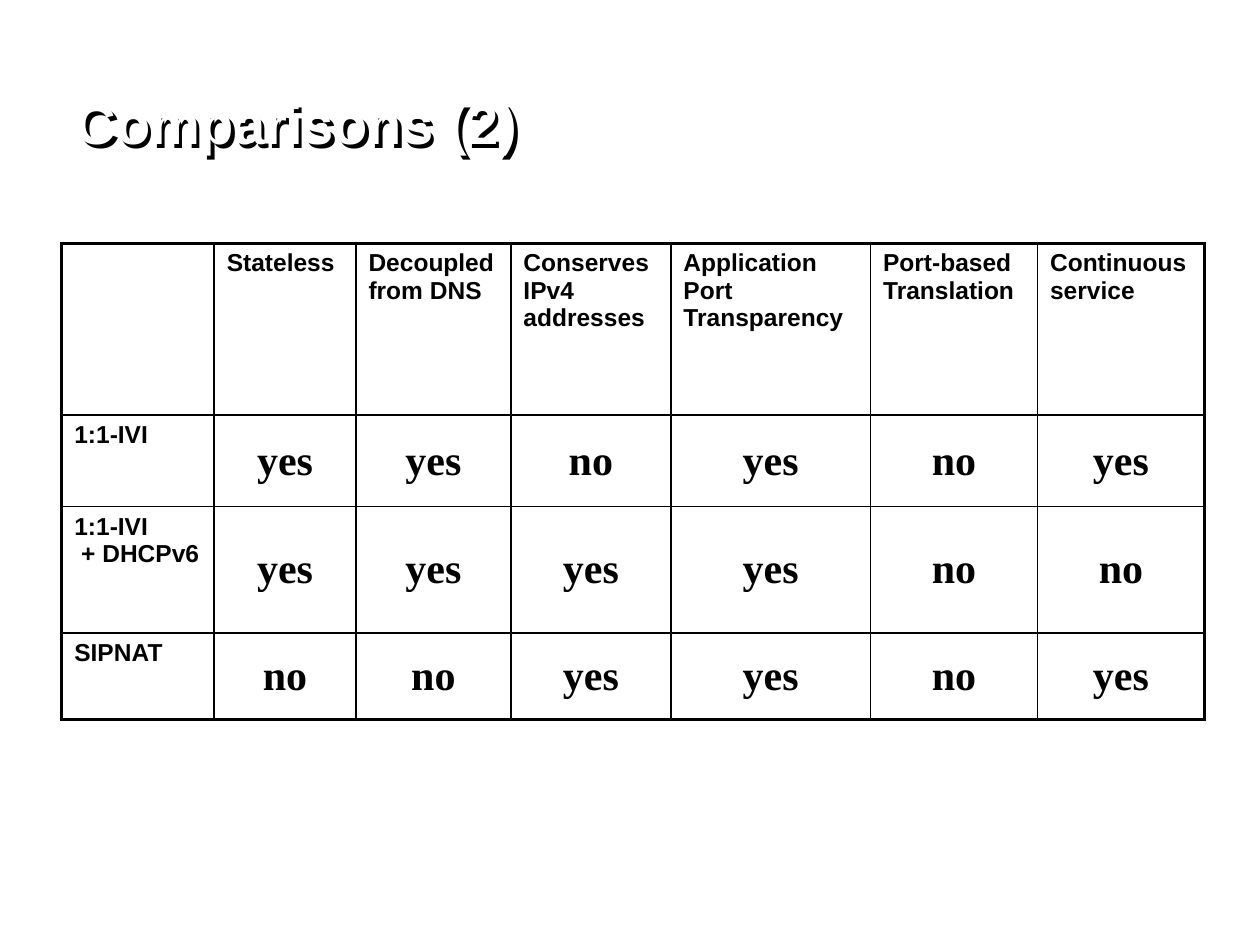
from dataclasses import dataclass

from lxml.etree import SubElement
from pptx import Presentation
from pptx.dml.color import RGBColor
from pptx.enum.text import MSO_ANCHOR as Anchor, MSO_AUTO_SIZE as AutoSize, PP_ALIGN as Align
from pptx.oxml import parse_xml
from pptx.oxml.ns import nsdecls, qn
from pptx.util import Inches, Pt

SLIDE_WIDTH, SLIDE_HEIGHT = Inches(10), Inches(7.5)
GRID_COLUMNS, GRID_ROWS = 100, 75
BLACK, WHITE = "000000", "FFFFFF"
THIN, THICK = 1, 2


@dataclass(frozen=True)
class Box:
    column: float
    row: float
    columns: float
    rows: float

    def lengths(self) -> tuple[int, int, int, int]:
        return across(self.column), down(self.row), across(self.columns), down(self.rows)


@dataclass(frozen=True)
class TableRow:
    label: str
    values: tuple[str, ...]
    height: float


TITLE_BOX = Box(5, 3, 90, 10)
TABLE_LEFT, TABLE_TOP = 4.9, 19.3
COLUMN_WIDTHS = (12.1, 11.25, 12.3, 12.7, 15.85, 13.25, 13.25)
HEADER_ROW = TableRow(
    "",
    ("Stateless", "Decoupled from DNS", "Conserves IPv4 addresses",
     "Application Port Transparency", "Port-based Translation", "Continuous service"),
    13.65,
)
SOLUTION_ROWS = (
    TableRow("1:1-IVI", ("yes", "yes", "no", "yes", "no", "yes"), 7.25),
    TableRow("1:1-IVI\n + DHCPv6", ("yes", "yes", "yes", "yes", "no", "no"), 10.05),
    TableRow("SIPNAT", ("no", "no", "yes", "yes", "no", "yes"), 6.85),
)


def across(columns: float) -> int:
    return round(SLIDE_WIDTH * columns / GRID_COLUMNS)


def down(rows: float) -> int:
    return round(SLIDE_HEIGHT * rows / GRID_ROWS)


def color(value: str) -> RGBColor:
    return RGBColor.from_string(value)


def write_text(frame, text: str, *, size: float = 14, font: str = "Arial", fill: str = BLACK,
               align=Align.LEFT, line_spacing: float = 1.0) -> None:
    frame.text = text
    for paragraph in frame.paragraphs:
        paragraph.alignment = align
        paragraph.line_spacing = line_spacing
        for run in paragraph.runs:
            run.font.name = font
            run.font.size = Pt(size)
            run.font.bold = True
            run.font.color.rgb = color(fill)


def add_shadow(shape) -> None:
    shape.fill.background()
    shape._element.spPr.append(parse_xml(
        f'<a:effectLst {nsdecls("a")}><a:outerShdw dist="36000" dir="2700000" algn="ctr" '
        f'rotWithShape="0"><a:srgbClr val="{BLACK}"/></a:outerShdw></a:effectLst>'
    ))


def set_border(cell, side: str, width: float) -> None:
    properties = cell._tc.get_or_add_tcPr()
    line = SubElement(properties, qn(f"a:ln{side}"), w=str(Pt(width)))
    fill = SubElement(line, qn("a:solidFill"))
    SubElement(fill, qn("a:srgbClr"), val=BLACK)


def draw_title(slide, text: str) -> None:
    title = slide.shapes.title
    title.left, title.top, title.width, title.height = TITLE_BOX.lengths()
    frame = title.text_frame
    frame.auto_size = AutoSize.NONE
    frame.vertical_anchor = Anchor.BOTTOM
    write_text(frame, text, size=32, fill=WHITE, line_spacing=0.95)
    add_shadow(title)


def draw_table(slide, rows: tuple[TableRow, ...]) -> None:
    box = Box(TABLE_LEFT, TABLE_TOP, sum(COLUMN_WIDTHS), sum(row.height for row in rows))
    table = slide.shapes.add_table(len(rows), len(COLUMN_WIDTHS), *box.lengths()).table
    table.first_row = table.horz_banding = False
    for column, width in zip(table.columns, COLUMN_WIDTHS):
        column.width = across(width)

    last_row, last_column = len(rows) - 1, len(COLUMN_WIDTHS) - 1
    for row_index, row in enumerate(rows):
        table.rows[row_index].height = down(row.height)
        for column_index, text in enumerate((row.label, *row.values)):
            cell = table.cell(row_index, column_index)
            outer_sides = {
                "L": column_index == 0,
                "R": column_index == last_column,
                "T": row_index == 0,
                "B": row_index == last_row,
            }
            for side, is_outer in outer_sides.items():
                set_border(cell, side, THICK if is_outer else THIN)
            cell.fill.background()
            if row_index and column_index:
                cell.vertical_anchor = Anchor.MIDDLE
                write_text(cell.text_frame, text, size=24, font="Times New Roman",
                           align=Align.CENTER)
            else:
                write_text(cell.text_frame, text)


def main() -> None:
    presentation = Presentation()
    presentation.slide_width, presentation.slide_height = SLIDE_WIDTH, SLIDE_HEIGHT
    slide = presentation.slides.add_slide(presentation.slide_layouts[5])
    slide.background.fill.solid()
    slide.background.fill.fore_color.rgb = color(WHITE)
    draw_title(slide, "Comparisons (2)")
    draw_table(slide, (HEADER_ROW, *SOLUTION_ROWS))
    presentation.save("out.pptx")


if __name__ == "__main__":
    main()
